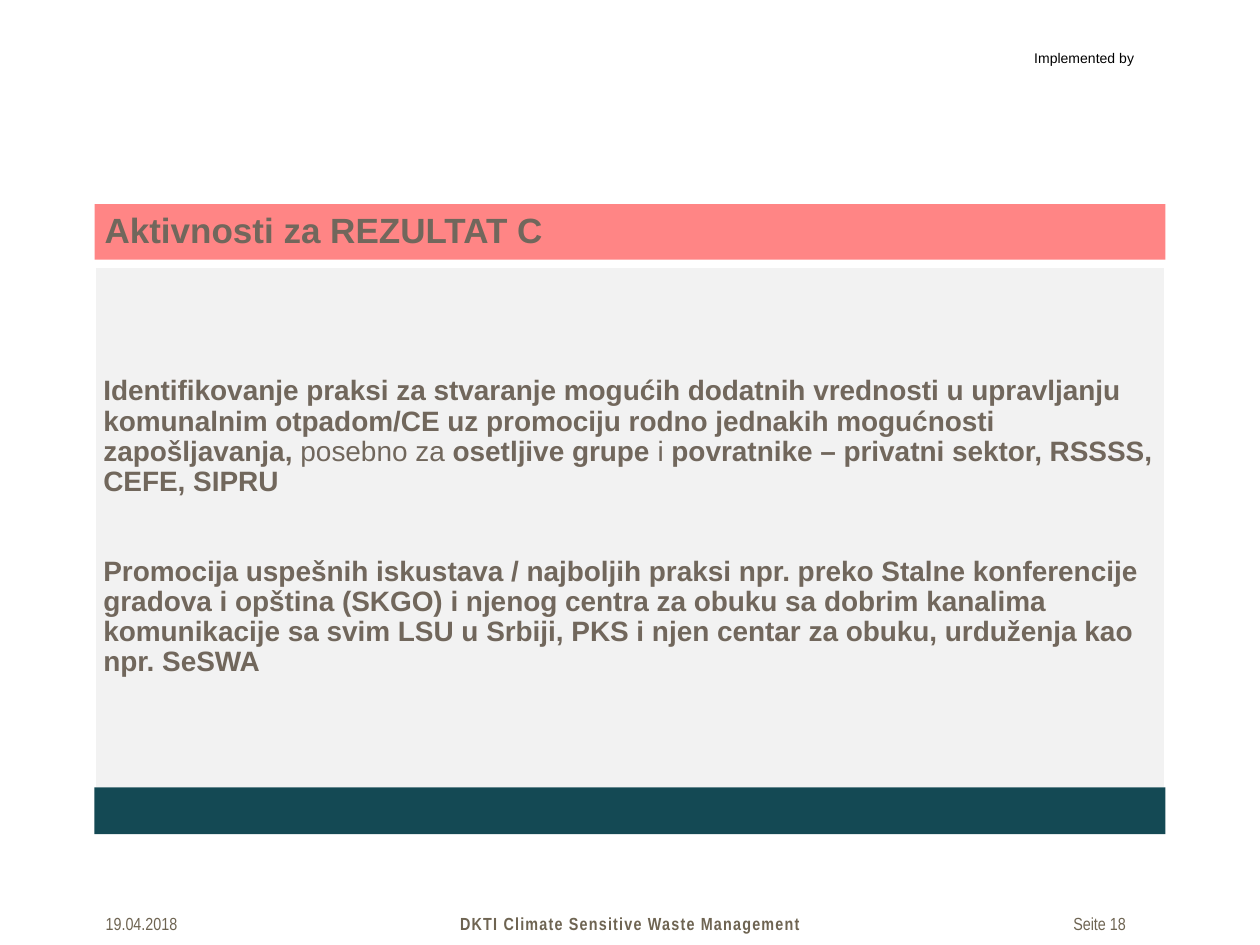
from dataclasses import dataclass

from pptx import Presentation
from pptx.dml.color import RGBColor
from pptx.enum.shapes import MSO_SHAPE
from pptx.enum.text import MSO_ANCHOR, MSO_AUTO_SIZE, PP_ALIGN
from pptx.oxml.ns import qn
from pptx.oxml.xmlchemy import OxmlElement
from pptx.shapes.base import BaseShape
from pptx.slide import Slide
from pptx.text.text import Font, _Paragraph
from pptx.util import Inches, Pt


@dataclass(frozen=True)
class Theme:
    face: str = "Arial"
    narrow_face: str = "Arial Narrow"
    text: str = "71675C"
    footer: str = "6E6452"
    black: str = "000000"
    title_fill: str = "FF8585"
    body_fill: str = "F2F2F2"
    body_line: str = "FFFFFF"
    band_fill: str = "144954"
    title_size: float = 20
    body_size: float = 16
    footer_size: float = 10
    label_size: float = 8


@dataclass(frozen=True)
class Area:
    left: float
    top: float
    width: float
    height: float


@dataclass(frozen=True)
class Label:
    text: str
    area: Area
    face: str
    size: float
    color: str
    bold: bool = False
    align: PP_ALIGN = PP_ALIGN.LEFT
    spacing: float = 0


@dataclass(frozen=True)
class Span:
    text: str
    bold: bool = True


THEME = Theme()
LEFT, WIDTH = 0.75, 8.5
TITLE_AREA = Area(LEFT, 1.62, WIDTH, 0.44)
BODY_AREA = Area(LEFT, 2.11, WIDTH, 4.15)
BAND_AREA = Area(LEFT, 6.25, WIDTH, 0.37)
FOOTER_TOP, FOOTER_HEIGHT = 7.2, 0.27
LINE_SPACING = 0.9
PARAGRAPH_GAP = 34

LABELS = [
    Label("Implemented by", Area(8.11, 0.34, 1.17, 0.24),
          THEME.face, THEME.label_size, THEME.black),
    Label("19.04.2018", Area(0.74, FOOTER_TOP, 1.42, FOOTER_HEIGHT),
          THEME.narrow_face, THEME.footer_size, THEME.footer),
    Label("DKTI Climate Sensitive Waste Management",
          Area(3.13, FOOTER_TOP, 3.74, FOOTER_HEIGHT),
          THEME.narrow_face, THEME.footer_size, THEME.footer,
          bold=True, align=PP_ALIGN.CENTER, spacing=0.7),
    Label("Seite 18", Area(8.42, FOOTER_TOP, 1.01, FOOTER_HEIGHT),
          THEME.narrow_face, THEME.footer_size, THEME.footer),
]

ACTIVITIES = [
    [
        Span("Identifikovanje praksi za stvaranje mogućih dodatnih vrednosti u "
             "upravljanju komunalnim otpadom/CE uz promociju rodno jednakih "
             "mogućnosti zapošljavanja, "),
        Span("posebno za ", bold=False),
        Span("osetljive grupe "),
        Span("i", bold=False),
        Span(" povratnike – privatni sektor, RSSSS, CEFE, SIPRU"),
    ],
    [
        Span("Promocija uspešnih iskustava / najboljih praksi npr. preko Stalne "
             "konferencije gradova i opština (SKGO) i njenog centra za obuku sa "
             "dobrim kanalima komunikacije sa svim LSU u Srbiji, PKS i njen centar "
             "za obuku, urduženja kao npr. SeSWA"),
    ],
]


def place(shape: BaseShape, area: Area) -> None:
    shape.left, shape.top = Inches(area.left), Inches(area.top)
    shape.width, shape.height = Inches(area.width), Inches(area.height)


def paint(shape: BaseShape, color: str) -> None:
    shape.fill.solid()
    shape.fill.fore_color.rgb = RGBColor.from_string(color)


def style_font(font: Font, face: str, size: float, color: str, bold: bool) -> None:
    font.name, font.size, font.bold = face, Pt(size), bold
    font.color.rgb = RGBColor.from_string(color)


def prepare_panel(shape: BaseShape, area: Area, color: str, inset: float) -> None:
    """Turn a placeholder into a filled panel with centred text of fixed size."""
    place(shape, area)
    paint(shape, color)
    frame = shape.text_frame
    frame.word_wrap = True
    frame.auto_size = MSO_AUTO_SIZE.NONE
    frame.vertical_anchor = MSO_ANCHOR.MIDDLE
    frame.margin_left = frame.margin_right = Inches(inset)
    frame.margin_top = frame.margin_bottom = Inches(inset)


def remove_bullet(para: _Paragraph) -> None:
    properties = para._p.get_or_add_pPr()
    properties.set("marL", "0")
    properties.set("indent", "0")
    properties.append(OxmlElement("a:buNone"))


def fill_title(page: Slide) -> None:
    title = page.shapes.title
    prepare_panel(title, TITLE_AREA, THEME.title_fill, 0.08)
    title.text_frame.text = "Aktivnosti za REZULTAT C"
    para = title.text_frame.paragraphs[0]
    para.alignment = PP_ALIGN.LEFT
    para.line_spacing = LINE_SPACING
    style_font(para.runs[0].font, THEME.face, THEME.title_size, THEME.text, True)


def fill_body(page: Slide) -> None:
    body = page.placeholders[1]
    prepare_panel(body, BODY_AREA, THEME.body_fill, 0.07)
    body.line.color.rgb = RGBColor.from_string(THEME.body_line)
    body.line.width = Pt(2)
    frame = body.text_frame
    for index, spans in enumerate(ACTIVITIES):
        para = frame.add_paragraph() if index else frame.paragraphs[0]
        remove_bullet(para)
        para.line_spacing = LINE_SPACING
        para.space_before = Pt(PARAGRAPH_GAP if index else 0)
        for span in spans:
            run = para.add_run()
            run.text = span.text
            style_font(run.font, THEME.face, THEME.body_size, THEME.text, span.bold)


def add_band(page: Slide) -> None:
    band = page.shapes.add_shape(MSO_SHAPE.RECTANGLE, 0, 0, 0, 0)
    place(band, BAND_AREA)
    paint(band, THEME.band_fill)
    band.line.fill.background()
    band.shadow.inherit = False


def add_label(page: Slide, label: Label) -> None:
    box = page.shapes.add_textbox(0, 0, 0, 0)
    place(box, label.area)
    box.text_frame.word_wrap = True
    box.text_frame.text = label.text
    para = box.text_frame.paragraphs[0]
    para.alignment = label.align
    run = para.runs[0]
    style_font(run.font, label.face, label.size, label.color, label.bold)
    if label.spacing:
        run._r.find(qn("a:rPr")).set("spc", str(round(label.spacing * 100)))


def main() -> None:
    deck = Presentation()
    deck.slide_width, deck.slide_height = Inches(10), Inches(7.5)
    page = deck.slides.add_slide(deck.slide_layouts[1])
    fill_title(page)
    fill_body(page)
    add_band(page)
    for label in LABELS:
        add_label(page, label)
    deck.save("out.pptx")


if __name__ == "__main__":
    main()
